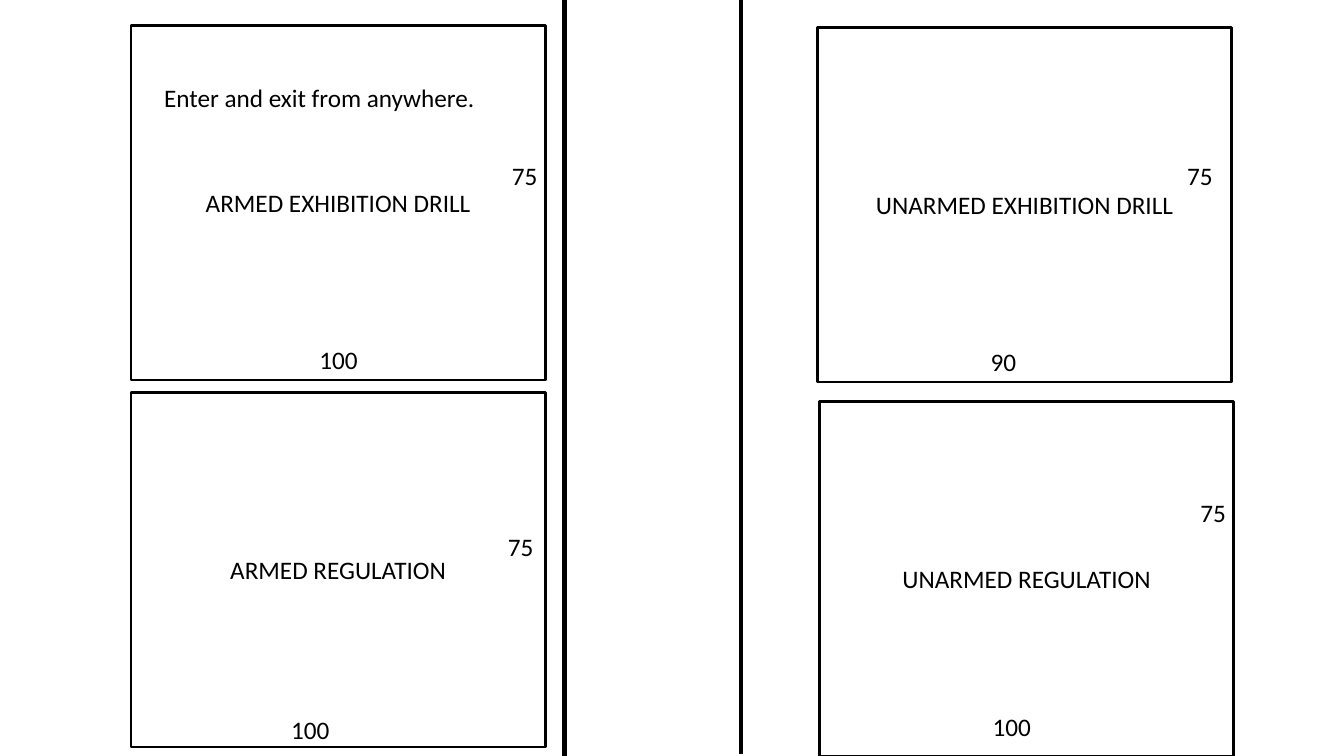
from lxml import etree
from pptx import Presentation
from pptx.dml.color import RGBColor
from pptx.enum.shapes import MSO_CONNECTOR as Connector, MSO_SHAPE as Shape
from pptx.enum.text import MSO_ANCHOR as Anchor, MSO_AUTO_SIZE as AutoSize, PP_ALIGN as Align
from pptx.oxml.ns import qn
from pptx.util import Inches, Pt

COLORS = {"ink": "000000"}
FONT = "Calibri"
INK = RGBColor.from_string(COLORS["ink"])

presentation = Presentation()
presentation.slide_width = Inches(13.33)
presentation.slide_height = Inches(7.5)
COLUMN = presentation.slide_width / 40
ROW = presentation.slide_height / 30

FIELD_SIZE = (12.33, 14.08)
LABEL_SIZE = (2.58, 1.6)
NOTE_SIZE = (9.96, 1.6)

# Title, field corner, depth and its offset, width and its offset (columns, rows)
FIELDS = [
    ("ARMED EXHIBITION DRILL", (3.9, 1), "75", (11.04, 5.16), "100", (5.31, 12.48)),
    ("ARMED REGULATION", (3.9, 15.56), "75", (10.92, 5.32), "100", (4.47, 12.6)),
    ("UNARMED EXHIBITION DRILL", (24.33, 1.08), "75", (10.71, 5.08), "90", (4.86, 12.48)),
    ("UNARMED REGULATION", (24.39, 15.92), "75", (11.04, 3.6), "100", (4.86, 12.12)),
]


def grid(column, row):
    return round(column * COLUMN), round(row * ROW)


def write(text_frame, text, align):
    text_frame.text = text
    paragraph = text_frame.paragraphs[0]
    paragraph.alignment = align
    font = paragraph.runs[0].font
    font.name, font.size = FONT, Pt(18)
    font.color.rgb = INK


def add_label(slide, corner, offset, text, size=LABEL_SIZE, wrap=True):
    left, top = corner[0] + offset[0], corner[1] + offset[1]
    text_frame = slide.shapes.add_textbox(*grid(left, top), *grid(*size)).text_frame
    text_frame.word_wrap = wrap
    text_frame.auto_size = AutoSize.SHAPE_TO_FIT_TEXT
    write(text_frame, text, Align.LEFT)


def add_field(slide, title, corner, depth, depth_offset, width, width_offset):
    field = slide.shapes.add_shape(Shape.RECTANGLE, *grid(*corner), *grid(*FIELD_SIZE))
    field.shadow.inherit = False
    field.fill.background()
    field.line.color.rgb = INK
    field.line.width = Pt(2)
    field.text_frame.vertical_anchor = Anchor.MIDDLE
    write(field.text_frame, title, Align.CENTER)
    add_label(slide, corner, depth_offset, depth)
    add_label(slide, corner, width_offset, width)


def add_divider(slide, column, top):
    divider = slide.shapes.add_connector(
        Connector.STRAIGHT, *grid(column, top), *grid(column, top + 30))
    divider.line.color.rgb = INK
    divider.line.width = Pt(3)
    etree.SubElement(divider._element.spPr, qn("a:effectLst"))


def build_drill_slide():
    slide = presentation.slides.add_slide(presentation.slide_layouts[6])
    for field in FIELDS:
        add_field(slide, *field)
    add_label(slide, FIELDS[0][1], (0.69, 2.08), "Enter and exit from anywhere.",
              NOTE_SIZE, wrap=False)
    for column, top in ((16.8, 0), (22.05, -0.08)):
        add_divider(slide, column, top)


if __name__ == "__main__":
    build_drill_slide()
    presentation.save("out.pptx")
